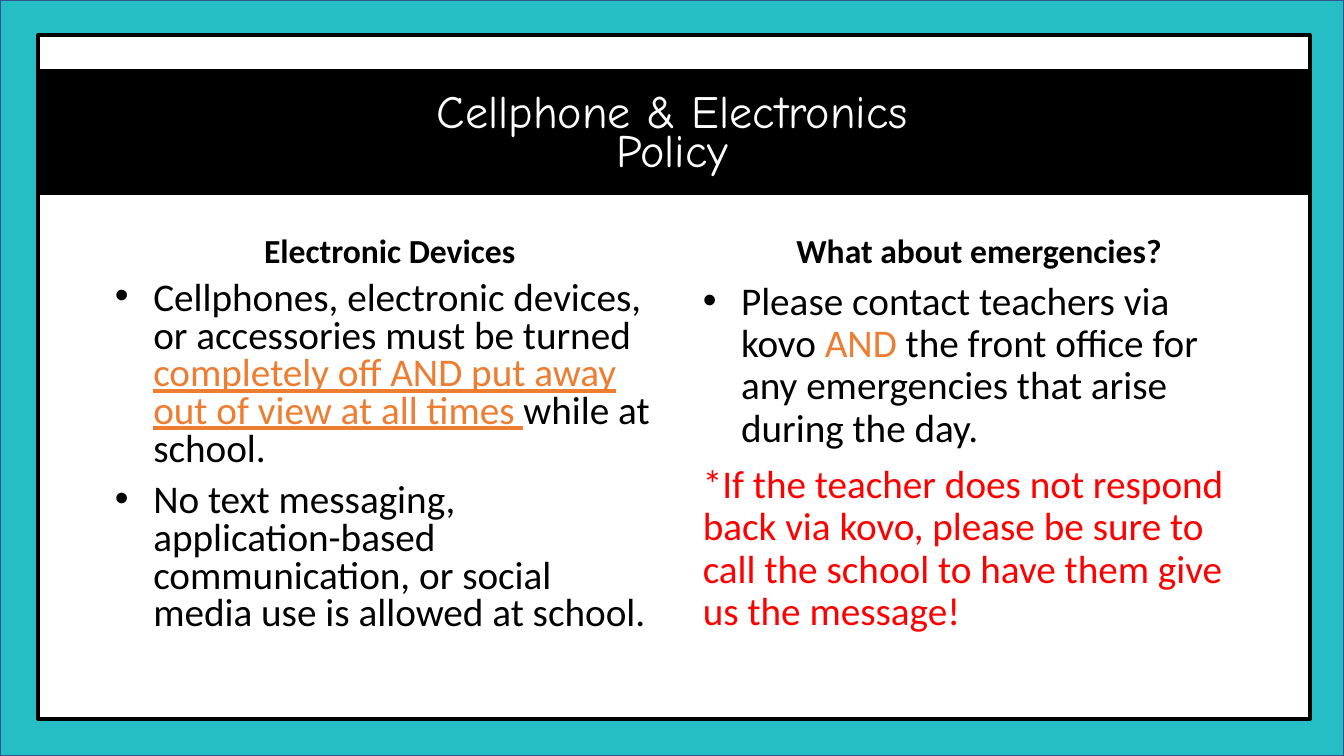
from dataclasses import dataclass

from lxml import etree
from pptx import Presentation
from pptx import util as u
from pptx.dml import color
from pptx.enum import shapes, text
from pptx.oxml import ns


@dataclass(frozen=True)
class Theme:
    teal: str = "25BEC5"
    navy: str = "31538F"
    white: str = "FFFFFF"
    black: str = "000000"
    accent: str = "ED7D31"
    alert: str = "FF0000"
    display: str = "Comic Neue"
    plain: str = "Calibri"
    title: int = 33
    head: int = 24
    body: int = 28


THEME = Theme()
CENTER = text.PP_ALIGN.CENTER
LEFT = text.PP_ALIGN.LEFT
TOP = text.MSO_ANCHOR.TOP
BOTTOM = text.MSO_ANCHOR.BOTTOM


def assign(item, values):
    for name, value in values.items():
        setattr(item, name, value)


def place(item, box):
    names = ("left", "top", "width", "height")
    assign(item, dict(zip(names, map(u.Inches, box))))


def panel(slide, box, fill, line, weight):
    rect = slide.shapes.add_shape(shapes.MSO_SHAPE.RECTANGLE, *map(u.Inches, box))
    rect.shadow.inherit = False
    rect.fill.solid()
    rect.fill.fore_color.rgb = color.RGBColor.from_string(fill)
    rect.line.color.rgb = color.RGBColor.from_string(line)
    rect.line.width = u.Pt(weight)


def holder(item, box, anchor):
    place(item, box)
    item.element.getparent().append(item.element)
    frame = item.text_frame
    assign(frame, {
        "word_wrap": True,
        "auto_size": text.MSO_AUTO_SIZE.NONE,
        "vertical_anchor": anchor,
        "margin_left": u.Inches(0.1),
        "margin_right": u.Inches(0.1),
        "margin_top": u.Inches(0.05),
        "margin_bottom": u.Inches(0.05),
    })
    return frame


def write(para, runs, size, face, bold=False, align=LEFT, space=0.9,
          before=10, margin=0, indent=0, bullet=False):
    assign(para, {
        "alignment": align,
        "line_spacing": space,
        "space_before": u.Pt(before),
        "space_after": u.Pt(0),
    })
    props = para._p.get_or_add_pPr()
    props.set("marL", str(u.Inches(margin)))
    props.set("indent", str(u.Inches(indent)))
    if bullet:
        font = etree.SubElement(props, ns.qn("a:buFont"))
        font.set("typeface", "Arial")
        mark = etree.SubElement(props, ns.qn("a:buChar"))
        mark.set("char", "•")
    else:
        etree.SubElement(props, ns.qn("a:buNone"))
    for words, tint, under in runs:
        run = para.add_run()
        run.text = words
        assign(run.font, {
            "name": face,
            "size": u.Pt(size),
            "bold": bold,
            "underline": under,
        })
        run.font.color.rgb = color.RGBColor.from_string(tint)


def border(slide, box):
    left, top, width, height = box
    panel(slide, box, THEME.teal, THEME.navy, 1)
    panel(slide, (left + 0.38, top + 0.35, width - 0.72, height - 0.72),
          THEME.white, THEME.black, 3)


def banner(slide, box, words):
    left, top, width, height = box
    panel(slide, box, THEME.black, THEME.black, 1)
    area = (left + 3.25, top + 0.14, 6.08, height - 0.28)
    frame = holder(slide.shapes.title, area, BOTTOM)
    write(frame.paragraphs[0], [(words, THEME.white, False)], THEME.title,
          THEME.display, align=CENTER, space=0.7, before=0)


def column(head, body, box, words, items, space):
    left, top, width, height = box
    tall = 0.9
    frame = holder(head, (left, top, width, tall), BOTTOM)
    write(frame.paragraphs[0], [(words, THEME.black, False)], THEME.head,
          THEME.plain, bold=True, align=CENTER, margin=0.5, indent=-0.25)
    frame = holder(body, (left, top + tall, width, height - tall), TOP)
    for count, (bullet, runs) in enumerate(items):
        para = frame.add_paragraph() if count else frame.paragraphs[0]
        margin, indent = (0.5, -0.38) if bullet else (0.12, 0)
        write(para, runs, THEME.body, THEME.plain, space=space,
              margin=margin, indent=indent, bullet=bullet)


def main():
    deck = Presentation()
    assign(deck, {"slide_width": u.Inches(13.33), "slide_height": u.Inches(7.5)})
    slide = deck.slides.add_slide(deck.slide_layouts.get_by_name("Comparison"))
    parts = slide.placeholders
    border(slide, (0, 0, 13.33, 7.5))
    banner(slide, (0.38, 0.69, 12.61, 1.24), "Cellphone & Electronics Policy")
    devices = [
        (True, [
            ("Cellphones, electronic devices, or accessories must be turned ",
             THEME.black, False),
            ("completely off AND put away out of view at all times ",
             THEME.accent, True),
            ("while at school.", THEME.black, False),
        ]),
        (True, [
            ("No text messaging, application-based communication, or social "
             "media use is allowed at school.", THEME.black, False),
        ]),
    ]
    urgent = [
        (True, [
            ("Please contact teachers via kovo ", THEME.black, False),
            ("AND", THEME.accent, False),
            (" the front office for any emergencies that arise during the day.",
             THEME.black, False),
        ]),
        (False, [
            ("*If the teacher does not respond back via kovo, please be sure to "
             "call the school to have them give us the message!",
             THEME.alert, False),
        ]),
    ]
    column(parts[1], parts[2], (0.92, 1.84, 5.64, 4.93),
           "Electronic Devices", devices, 0.8)
    column(parts[3], parts[4], (6.75, 1.84, 5.67, 4.93),
           "What about emergencies?", urgent, 0.9)
    deck.save("out.pptx")


if __name__ == "__main__":
    main()
